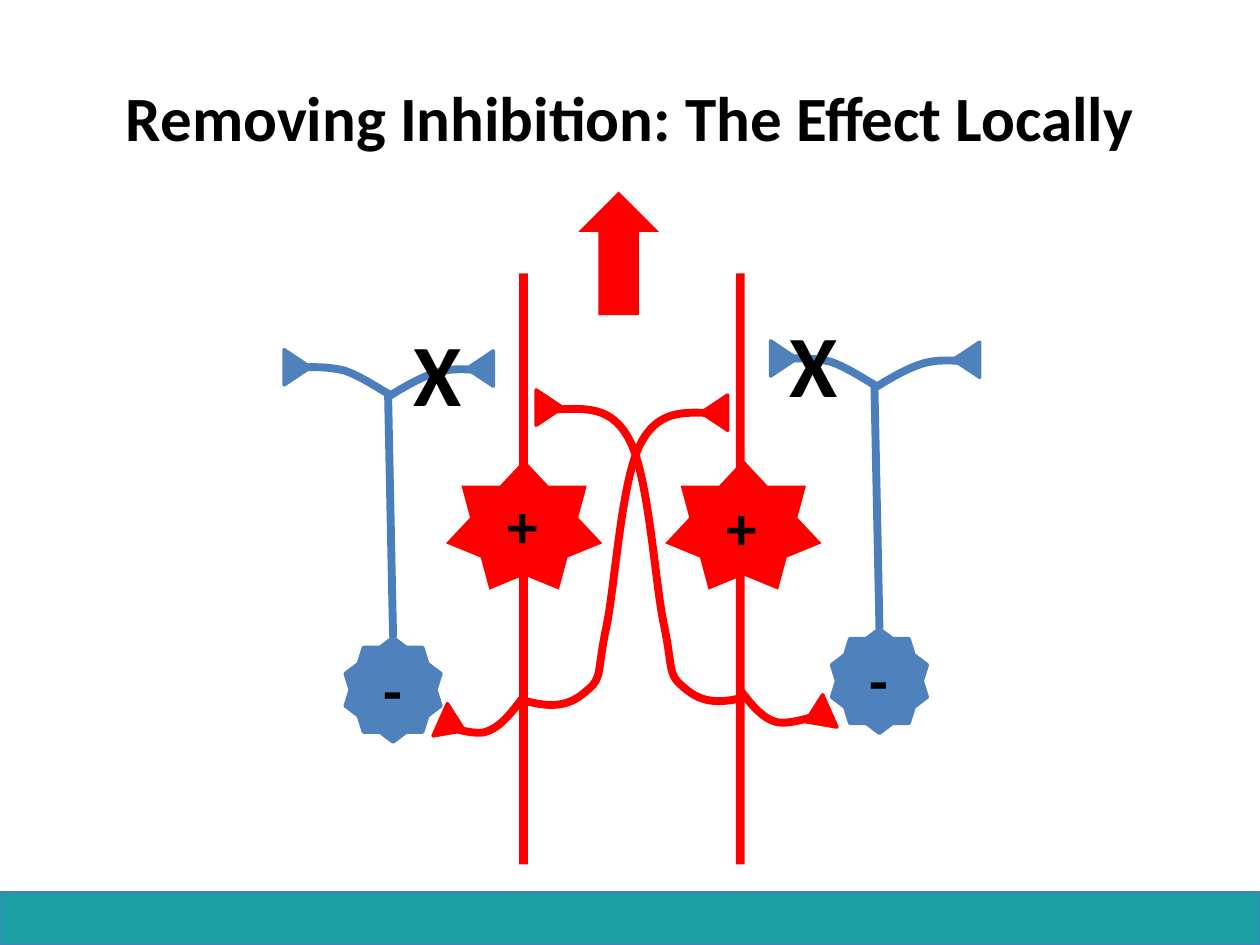
from lxml import etree
from pptx import Presentation
from pptx import util as u
from pptx.dml.color import RGBColor
from pptx.enum import shapes, text
from pptx.oxml.ns import qn

COLORS = {"red": "FF0000", "blue": "4F81BD", "axon": "4B7EBC",
          "teal": "1C9FA3", "black": "000000"}
MSO = shapes.MSO_SHAPE


def cm(inches):
    """Convert inches on the slide grid to a Cm length."""
    return u.Cm(inches * 2.54)


class Diagram:
    """Holds the style and the current slide."""

    def __init__(self, prs):
        """Add a blank slide to draw on."""
        self.font = "Calibri"
        self.slide = prs.slides.add_slide(prs.slide_layouts[6])

    def color(self, name):
        """Return a named colour."""
        return RGBColor.from_string(COLORS[name])

    def outline(self, sp, name, width):
        """Set the line of a shape, or remove it."""
        if name:
            sp.line.color.rgb = self.color(name)
            sp.line.width = u.Pt(width)
        else:
            sp.line.fill.background()

    def shape(self, kind, box, fill, line=None, width=2, rotation=0):
        """Add a filled preset shape."""
        sp = self.slide.shapes.add_shape(kind, *map(cm, box))
        sp.shadow.inherit = False
        sp.fill.solid()
        sp.fill.fore_color.rgb = self.color(fill)
        self.outline(sp, line, width)
        sp.rotation = rotation
        return sp

    def shadow(self, sp, **fmt):
        """Give a shape a soft black shadow."""
        effects = sp._element.spPr.find(qn("a:effectLst"))
        outer = etree.SubElement(effects, qn("a:outerShdw"), fmt)
        clr = etree.SubElement(outer, qn("a:srgbClr"), val=COLORS["black"])
        etree.SubElement(clr, qn("a:alpha"), val="35000")

    def line(self, start, end, color):
        """Add a straight connector."""
        sp = self.slide.shapes.add_connector(
            shapes.MSO_CONNECTOR.STRAIGHT, *map(cm, start + end))
        self.outline(sp, color, 4.5)
        etree.SubElement(sp._element.spPr, qn("a:effectLst"))

    def curve(self, points, color):
        """Add an open chain of cubic curves: start, control, control, end, ..."""
        first, *rest = [tuple(map(cm, p)) for p in points]
        builder = self.slide.shapes.build_freeform(*first)
        builder.add_line_segments(rest, close=False)
        sp = builder.convert_to_shape()
        outline = next(sp._element.iter(qn("a:path")))
        steps = outline.findall(qn("a:lnTo"))
        for i in range(0, len(steps), 3):
            cubic = etree.SubElement(outline, qn("a:cubicBezTo"))
            for step in steps[i:i + 3]:
                cubic.append(step[0])
                outline.remove(step)
        sp.shadow.inherit = False
        sp.fill.background()
        self.outline(sp, color, 4.5)

    def terminal(self, x, y, rotation, color):
        """Add a triangular axon ending."""
        self.shape(MSO.ISOSCELES_TRIANGLE, (x, y, 0.28, 0.21), color, color,
                   rotation=rotation)

    def label(self, words, box, size, align=text.PP_ALIGN.CENTER, **frame):
        """Add bold text."""
        tf = self.slide.shapes.add_textbox(*map(cm, box)).text_frame
        fmt = {"word_wrap": False, "auto_size": text.MSO_AUTO_SIZE.SHAPE_TO_FIT_TEXT}
        for key, value in {**fmt, **frame}.items():
            setattr(tf, key, value)
        p = tf.paragraphs[0]
        p.alignment = align
        r = p.add_run()
        r.text = words
        for key, value in {"name": self.font, "size": u.Pt(size), "bold": True}.items():
            setattr(r.font, key, value)
        r.font.color.rgb = self.color("black")

    def inhibitory(self, dx, dy):
        """Add a blue neuron with two branches, shifted from the left one."""
        def at(*points):
            return [(x + dx, y + dy) for x, y in points]

        self.shape(MSO.STAR_10_POINT, (2.74 + dx, 5.06 + dy, 0.76, 0.83), "blue", "blue")
        self.line(*at((3.12, 5.06), (3.08, 3.13)), "axon")
        self.curve(at((3.09, 3.13), (2.97, 3.06), (2.85, 2.98), (2.73, 2.94),
                      (2.6, 2.91), (2.48, 2.91), (2.35, 2.92)), "axon")
        self.curve(at((3.08, 3.15), (3.21, 3.07), (3.33, 3), (3.45, 2.96),
                      (3.57, 2.92), (3.7, 2.93), (3.82, 2.94)), "axon")
        self.terminal(3.67 + dx, 2.82 + dy, 270, "blue")
        self.terminal(2.22 + dx, 2.81 + dy, 90, "blue")


def main():
    """Build the slide."""
    prs = Presentation()
    prs.slide_width, prs.slide_height = cm(10), cm(7.5)
    d = Diagram(prs)

    footer = d.shape(MSO.RECTANGLE, (0, 7.08, 10, 0.42), "teal", "axon", 0.75)
    d.shadow(footer, blurRad="40000", dist="23000", dir="5400000", rotWithShape="0")
    d.label("Removing Inhibition: The Effect Locally", (0, 0.3, 10, 1.25), 36,
            word_wrap=True, auto_size=text.MSO_AUTO_SIZE.NONE,
            vertical_anchor=text.MSO_ANCHOR.MIDDLE)

    for x in (5.84, 4.12):
        d.shape(MSO.RECTANGLE, (x, 2.17, 0.07, 4.69), "red")
    for x in (5.28, 3.54):
        d.shape(MSO.STAR_7_POINT, (x, 3.65, 1.24, 1.03), "red")

    crossing = [(4.16, 5.56), (4.44, 5.64), (4.56, 5.57), (4.67, 5.47),
                (4.78, 5.38), (4.74, 5.32), (4.81, 4.99),
                (4.88, 4.67), (4.93, 3.82), (5.08, 3.53),
                (5.22, 3.25), (5.43, 3.27), (5.67, 3.28)]
    hook = [(4.14, 5.55), (4.05, 5.67), (3.96, 5.78), (3.85, 5.81),
            (3.74, 5.84), (3.47, 5.74), (3.47, 5.74)]
    d.curve(crossing, "red")
    d.curve([(10.08 - x, y - 0.03) for x, y in crossing], "red")
    d.terminal(5.53, 3.17, 270, "red")
    d.terminal(4.22, 3.13, 90, "red")

    for dx, dy in ((0, 0), (3.86, -0.07)):
        d.inhibitory(dx, dy)

    d.curve(hook, "red")
    d.terminal(3.45, 5.65, 114, "red")
    d.curve([(10.01 - x, y - 0.08) for x, y in hook], "red")
    d.terminal(6.35, 5.58, 246, "red")

    d.shape(MSO.UP_ARROW, (4.59, 1.52, 0.64, 0.98), "red")
    for x, y in ((3.18, 2.48), (6.17, 2.41)):
        d.label("X", (x, y, 0.59, 0.94), 50, text.PP_ALIGN.LEFT)
    for sign, x, y, w in (("+", 5.66, 3.83, 0.45), ("-", 2.94, 5.13, 0.35),
                          ("-", 6.8, 5.05, 0.35), ("+", 3.92, 3.82, 0.45)):
        d.label(sign, (x, y, w, 0.69), 35)

    prs.save("out.pptx")


if __name__ == "__main__":
    main()
